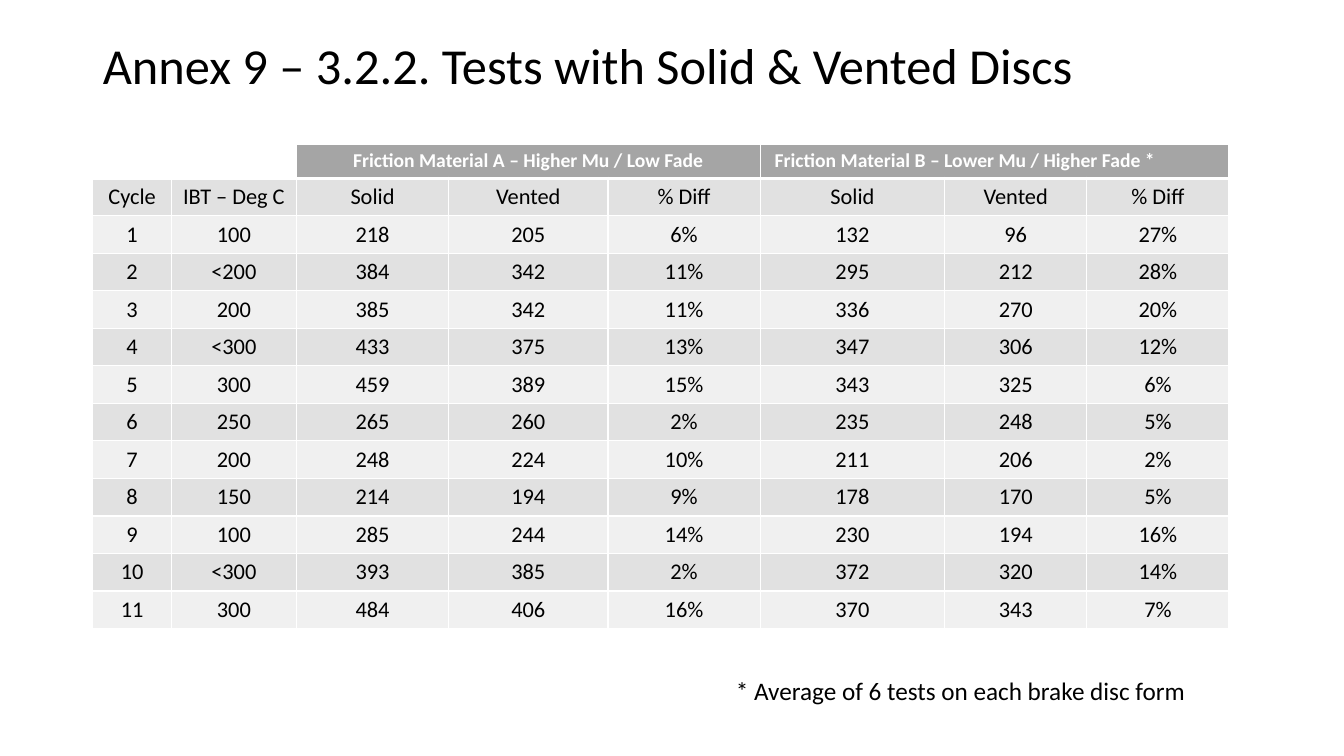
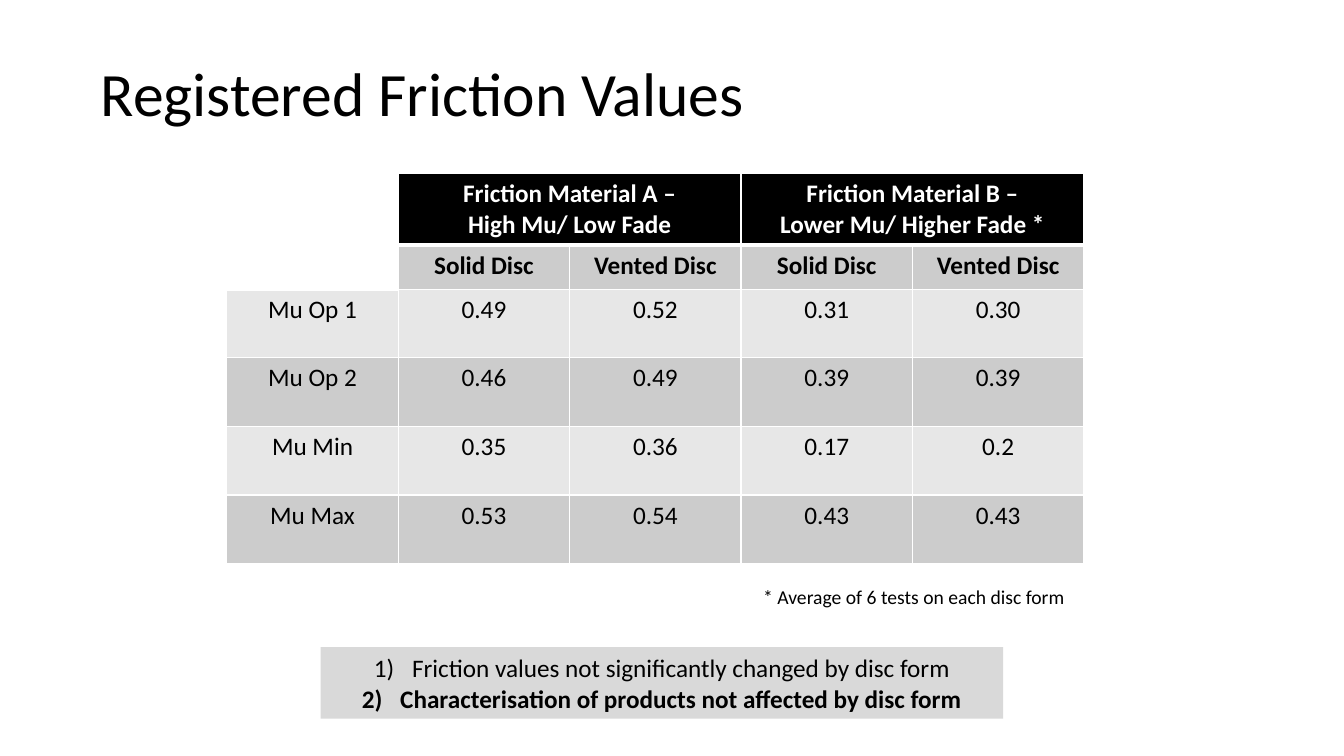
from dataclasses import dataclass

from lxml import etree
from pptx import Presentation
from pptx.dml.color import RGBColor
from pptx.enum.shapes import MSO_SHAPE
from pptx.enum.text import MSO_ANCHOR, MSO_AUTO_SIZE, PP_ALIGN
from pptx.oxml.ns import qn
from pptx.util import Inches, Pt

RECTANGLE = MSO_SHAPE.RECTANGLE
MIDDLE = MSO_ANCHOR.MIDDLE
NO_AUTOFIT = MSO_AUTO_SIZE.NONE
GROW = MSO_AUTO_SIZE.SHAPE_TO_FIT_TEXT
LEFT = PP_ALIGN.LEFT
CENTER = PP_ALIGN.CENTER


@dataclass(frozen=True)
class Theme:
    font: str = "Calibri"
    black: str = "000000"
    white: str = "FFFFFF"
    gray_header: str = "A5A5A5"
    gray_bands: tuple = ("F0F0F0", "E1E1E1")
    black_bands: tuple = ("E7E7E7", "CCCCCC")
    conclusion_fill: str = "D9D9D9"
    small: int = 14
    cycle_size: int = 16
    body: int = 18
    long_title: int = 36
    title: int = 44
    thin_border: int = 1
    header_border: int = 3


THEME = Theme()


def write_text(frame, text, size, color=THEME.black, bold=False, alignment=LEFT):
    frame.text = text
    for paragraph in frame.paragraphs:
        paragraph.alignment = alignment
        paragraph.font.name = THEME.font
        paragraph.font.size = Pt(size)
        paragraph.font.bold = bold
        paragraph.font.color.rgb = RGBColor.from_string(color)


def add_borders(cell, row_index):
    properties = cell._tc.get_or_add_tcPr()
    heavy_edge = {0: "lnB", 1: "lnT"}.get(row_index)
    for edge in ("lnL", "lnR", "lnT", "lnB"):
        width = THEME.header_border if edge == heavy_edge else THEME.thin_border
        line = etree.SubElement(properties, qn(f"a:{edge}"), w=str(Pt(width)))
        fill = etree.SubElement(line, qn("a:solidFill"))
        etree.SubElement(fill, qn("a:srgbClr"), val=THEME.white)


pages = [
    {
        "title": "Annex 9 – 3.2.2. Tests with Solid & Vented Discs",
        "title_box": (0.92, 0.38, 11.5, 0.6),
        "title_size": THEME.long_title,
        "origin": (0.92, 1.43),
        "widths": [0.78, 1.24, 1.51, 1.58, 1.51, 1.83, 1.41, 1.41],
        "heights": [0.34] + [0.37] * 12,
        "header_fill": THEME.gray_header,
        "header_size": THEME.small,
        "bands": THEME.gray_bands,
        "size": THEME.cycle_size,
        "bold_rows": 1,
        "merges": [(0, 0, 0, 1), (0, 2, 0, 4), (0, 5, 0, 7)],
        "left_header": 5,
        "rows": [
            ["", "", "Friction Material A – Higher Mu / Low Fade", "", "",
             " Friction Material B – Lower Mu / Higher Fade *", "", ""],
            ["Cycle", "IBT – Deg C"] + ["Solid", "Vented", "% Diff"] * 2,
            ["1", "100", "218", "205", "6%", "132", "96", "27%"],
            ["2", "<200", "384", "342", "11%", "295", "212", "28%"],
            ["3", "200", "385", "342", "11%", "336", "270", "20%"],
            ["4", "<300", "433", "375", "13%", "347", "306", "12%"],
            ["5", "300", "459", "389", "15%", "343", "325", "6%"],
            ["6", "250", "265", "260", "2%", "235", "248", "5%"],
            ["7", "200", "248", "224", "10%", "211", "206", "2%"],
            ["8", "150", "214", "194", "9%", "178", "170", "5%"],
            ["9", "100", "285", "244", "14%", "230", "194", "16%"],
            ["10", "<300", "393", "385", "2%", "372", "320", "14%"],
            ["11", "300", "484", "406", "16%", "370", "343", "7%"],
        ],
        "note": "* Average of 6 tests on each brake disc form",
        "note_box": (7.2, 6.65, 4.77, 0.4),
        "note_size": THEME.body,
    },
    {
        "title": "Registered Friction Values",
        "title_box": (0.9, 0.48, 11.5, 0.95),
        "title_size": THEME.title,
        "origin": (2.25, 1.72),
        "widths": [1.7] * 5,
        "heights": [0.7, 0.44] + [0.68] * 4,
        "header_fill": THEME.black,
        "header_size": THEME.body,
        "bands": THEME.black_bands,
        "size": THEME.body,
        "bold_rows": 2,
        "merges": [(0, 0, 1, 0), (0, 1, 0, 2), (0, 3, 0, 4)],
        "left_header": None,
        "rows": [
            ["", "Friction Material A –\nHigh Mu/ Low Fade", "",
             "Friction Material B –\nLower Mu/ Higher Fade *", ""],
            [""] + ["Solid Disc", "Vented Disc"] * 2,
            ["Mu Op 1", "0.49", "0.52", "0.31", "0.30"],
            ["Mu Op 2", "0.46", "0.49", "0.39", "0.39"],
            ["Mu Min", "0.35", "0.36", "0.17", "0.2"],
            ["Mu Max", "0.53", "0.54", "0.43", "0.43"],
        ],
        "note": "* Average of 6 tests on each disc form",
        "note_box": (7.47, 5.75, 3.22, 0.34),
        "note_size": THEME.small,
    },
]

presentation = Presentation()
presentation.slide_width = Inches(13.33)
presentation.slide_height = Inches(7.5)
title_only = presentation.slide_layouts[5]

for page in pages:
    slide = presentation.slides.add_slide(title_only)
    title = slide.shapes.title
    title.left, title.top, title.width, title.height = map(Inches, page["title_box"])
    title.text_frame.auto_size = NO_AUTOFIT
    title.text_frame.vertical_anchor = MIDDLE
    write_text(title.text_frame, page["title"], page["title_size"])
    title.text_frame.paragraphs[0].line_spacing = 0.9

    rows, widths, heights = page["rows"], page["widths"], page["heights"]
    left, top = page["origin"]
    table = slide.shapes.add_table(
        len(rows), len(widths), Inches(left), Inches(top),
        Inches(sum(widths)), Inches(sum(heights)),
    ).table
    table.first_row = False
    table.horz_banding = False
    for column, width in zip(table.columns, widths):
        column.width = Inches(width)
    for row, height in zip(table.rows, heights):
        row.height = Inches(height)

    for row_index, values in enumerate(rows):
        is_header = row_index == 0
        for column_index, value in enumerate(values):
            cell = table.cell(row_index, column_index)
            write_text(
                cell.text_frame, value,
                page["header_size"] if is_header else page["size"],
                THEME.white if is_header else THEME.black,
                row_index < page["bold_rows"],
                LEFT if is_header and column_index == page["left_header"] else CENTER,
            )
            add_borders(cell, row_index)
            band = page["header_fill"] if is_header else page["bands"][row_index % 2]
            cell.fill.solid()
            cell.fill.fore_color.rgb = RGBColor.from_string(
                THEME.white if is_header and column_index == 0 else band
            )
    for first_row, first_column, last_row, last_column in page["merges"]:
        table.cell(first_row, first_column).merge(table.cell(last_row, last_column))

    note = slide.shapes.add_textbox(*map(Inches, page["note_box"]))
    note.text_frame.word_wrap = False
    note.text_frame.auto_size = GROW
    write_text(note.text_frame, page["note"], page["note_size"])

conclusions = slide.shapes.add_shape(
    RECTANGLE, Inches(3.18), Inches(6.42), Inches(6.77), Inches(0.71)
)
conclusions.shadow.inherit = False
conclusions.fill.solid()
conclusions.fill.fore_color.rgb = RGBColor.from_string(THEME.conclusion_fill)
conclusions.line.fill.background()
conclusions.text_frame.word_wrap = True
conclusions.text_frame.auto_size = GROW
write_text(
    conclusions.text_frame,
    "Friction values not significantly changed by disc form\n"
    "Characterisation of products not affected by disc form",
    THEME.body, alignment=CENTER,
)
conclusions.text_frame.paragraphs[1].font.bold = True
for paragraph in conclusions.text_frame.paragraphs:
    properties = paragraph._p.get_or_add_pPr()
    properties.set("marL", str(Inches(0.38)))
    properties.set("indent", str(-Inches(0.38)))
    numbering = etree.Element(qn("a:buAutoNum"), type="arabicParenR")
    properties.find(qn("a:defRPr")).addprevious(numbering)

presentation.save("out.pptx")
